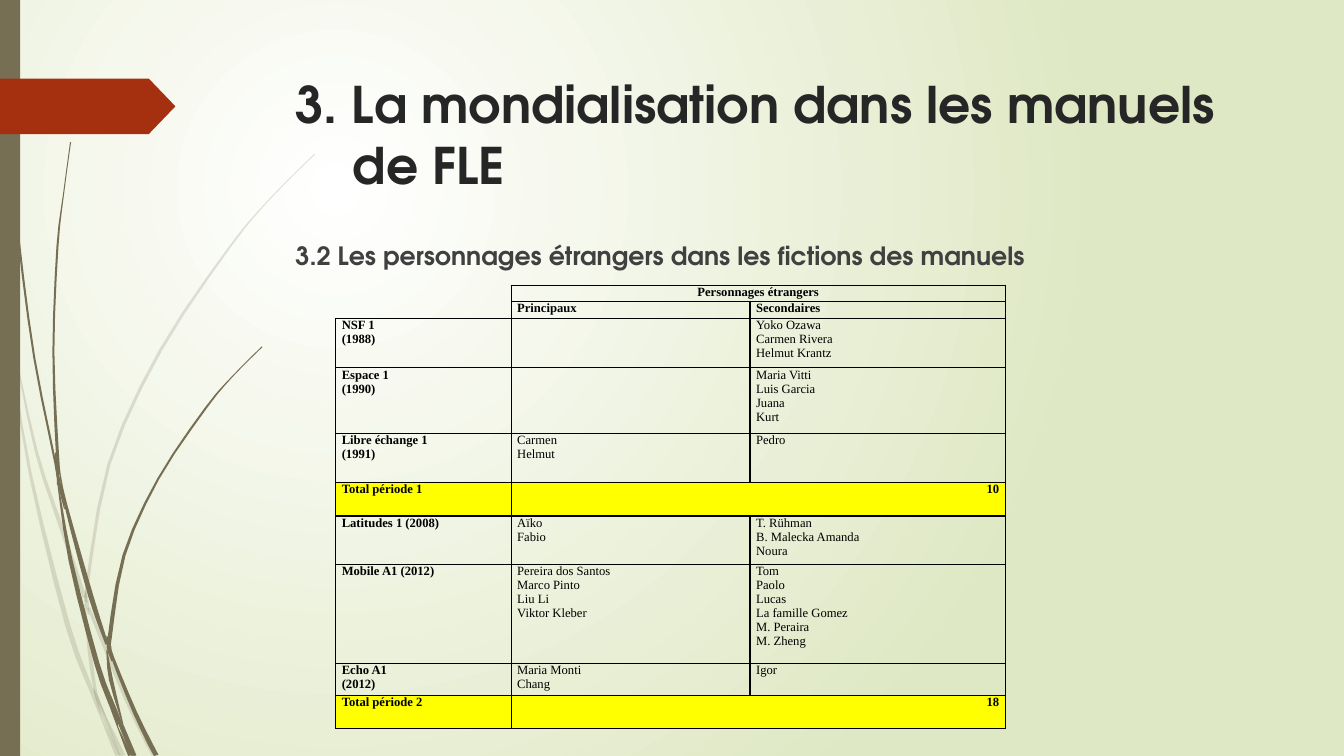
import math
import dataclasses
import lxml.etree
import pptx
import pptx.util
import pptx.dml.color
import pptx.enum.shapes
import pptx.enum.text
import pptx.oxml.ns

Inches = pptx.util.Inches
Pt = pptx.util.Pt
Align = pptx.enum.text.PP_ALIGN
Form = pptx.enum.shapes.MSO_SHAPE
qn = pptx.oxml.ns.qn


@dataclasses.dataclass
class Theme:
    head: str = "TeX Gyre Adventor"
    serif: str = "Times New Roman"
    title: int = 36
    sub: int = 18
    cell: int = 9
    dark: str = "262626"
    grey: str = "404040"
    black: str = "000000"
    olive: str = "766F54"
    rust: str = "A53010"
    yellow: str = "FFFF00"
    glow: tuple = ("FFFFFF", "DFE8C4")


def rgb(code):
    return pptx.dml.color.RGBColor.from_string(code)


def child(node, tag, **attrs):
    return lxml.etree.SubElement(node, qn(tag), **attrs)


def smooth(knots, steps=3):
    ends = [knots[0], *knots, knots[-1]]
    curve = []
    for a, b, c, d in zip(ends, ends[1:], ends[2:], ends[3:]):
        for k in range(steps):
            t = k / steps
            curve.append(tuple(
                (2 * q + (r - p) * t + (2 * p - 5 * q + 4 * r - s) * t ** 2
                 + (3 * q - p - 3 * r + s) * t ** 3) / 2
                for p, q, r, s in zip(a, b, c, d)))
    return curve + [knots[-1]]


class Deck:
    def __init__(self, theme):
        self.theme = theme
        self.show = pptx.Presentation()
        self.show.slide_width = Inches(13.33)
        self.show.slide_height = Inches(7.5)
        self.slide = self.show.slides.add_slide(self.show.slide_layouts[1])

    def back(self):
        fill = self.slide.background.fill
        fill.gradient()
        for stop, place, code in zip(fill.gradient_stops, (0, 1), self.theme.glow):
            stop.position = place
            stop.color.rgb = rgb(code)
        grad = self.slide.element.find(".//" + qn("a:gradFill"))
        grad.remove(grad.find(qn("a:lin")))
        ring = child(grad, "a:path", path="circle")
        child(ring, "a:fillToRect", l="50000", t="50000", r="100000", b="100000")

    def run(self, para, text, font, size, code, bold):
        run = para.add_run()
        run.text = text
        run.font.name = font
        run.font.size = Pt(size)
        run.font.bold = bold
        run.font.color.rgb = rgb(code)

    def holder(self, index, box, lines, size, code, hang=0):
        shape = self.slide.placeholders[index]
        shape.left, shape.top, shape.width, shape.height = map(Inches, box)
        frame = shape.text_frame
        frame.auto_size = pptx.enum.text.MSO_AUTO_SIZE.NONE
        frame.vertical_anchor = pptx.enum.text.MSO_ANCHOR.TOP
        para = frame.paragraphs[0]
        props = para._p.get_or_add_pPr()
        props.set("marL", str(Inches(hang)))
        props.set("indent", str(-Inches(hang)))
        child(props, "a:buNone")
        para.alignment = Align.LEFT
        para.space_before = Pt(0)
        for count, line in enumerate(lines):
            if count:
                para.add_line_break()
            self.run(para, line, self.theme.head, size, code, True)

    def paint(self, shape, code):
        shape.shadow.inherit = False
        shape.fill.solid()
        shape.fill.fore_color.rgb = rgb(code)
        shape.line.fill.background()

    def shape(self, form, box, code):
        shape = self.slide.shapes.add_shape(form, *map(Inches, box))
        self.paint(shape, code)
        return shape

    def blade(self, knots, alpha=None):
        spine = smooth(knots)
        left, right = [], []
        for k, (x, y, wide) in enumerate(spine):
            a, b = spine[max(k - 1, 0)], spine[min(k + 1, len(spine) - 1)]
            dx, dy = b[0] - a[0], b[1] - a[1]
            half = wide / 2 / math.hypot(dx, dy)
            for edge, sign in ((left, 1), (right, -1)):
                edge.append((Inches(max(x - sign * dy * half, 0)),
                             Inches(min(max(y + sign * dx * half, 0), 7.5))))
        points = left + right[::-1]
        draft = self.slide.shapes.build_freeform(*points[0])
        draft.add_line_segments(points[1:], close=True)
        shape = draft.convert_to_shape()
        self.paint(shape, self.theme.olive)
        if alpha:
            tint = shape._element.spPr.find(qn("a:solidFill"))[0]
            child(tint, "a:alpha", val=str(alpha * 1000))

    def edge(self, cell, sides):
        props = cell._tc.get_or_add_tcPr()
        for place, side in enumerate("LRTB"):
            line = lxml.etree.Element(qn("a:ln" + side), w=str(Pt(1)))
            if side in sides:
                child(child(line, "a:solidFill"), "a:srgbClr", val=self.theme.black)
            else:
                child(line, "a:noFill")
            props.insert(place, line)

    def cell(self, cell, text, bold, align, code=None, sides="LRTB"):
        cell.margin_left = cell.margin_right = Inches(0.06)
        cell.margin_top = cell.margin_bottom = 0
        if code:
            cell.fill.solid()
            cell.fill.fore_color.rgb = rgb(code)
        else:
            cell.fill.background()
        self.edge(cell, sides)
        frame = cell.text_frame
        for count, line in enumerate(text.split("\n")):
            para = frame.add_paragraph() if count else frame.paragraphs[0]
            para.alignment = align
            if line:
                self.run(para, line, self.theme.serif, self.theme.cell,
                         self.theme.black, bold)
            else:
                child(para._p, "a:endParaRPr", sz=str(self.theme.cell * 100))

    def table(self, box, cols, tall, rows):
        frame = self.slide.shapes.add_table(len(rows), len(cols), *map(Inches, box))
        grid = frame.table
        grid.first_row = grid.horz_banding = False
        for col, wide in zip(grid.columns, cols):
            col.width = Inches(wide)
        for row, high in zip(grid.rows, tall):
            row.height = Inches(high)
        for r, texts in enumerate(rows):
            total = texts[0].startswith("Total")
            for c, text in enumerate(texts):
                align = Align.RIGHT if total and c else Align.LEFT
                self.cell(grid.cell(r, c), text, r < 2 or c == 0 or total,
                          Align.CENTER if r == 0 else align,
                          self.theme.yellow if total else None,
                          "RB" if r < 2 and c == 0 else "LRTB")
            if r == 0 or total:
                grid.cell(r, 1).merge(grid.cell(r, 2))
        grid.cell(0, 0).merge(grid.cell(1, 0))


PALE = [
    [(0, 2.9, .04), (.06, 3.2, .04), (.11, 3.5, .01)],
    [(.14, 3.45, .01), (.36, 4.48, .03), (.6, 5.21, .04), (.84, 5.93, .04)],
    [(.88, 6.03, .03), (1.25, 6.93, .04), (1.53, 7.5, .05)],
    [(1.05, 7.11, .01), (1.22, 7.5, .05)],
    [(.11, 3.5, .01), (.3, 4.7, .03), (.67, 6.2, .05), (.92, 6.88, .04), (1.01, 7.14, .01)],
    [(.84, 5.99, .01), (.89, 6.46, .04), (.95, 6.87, .03), (1.05, 7.11, .01)],
    [(3.12, 1.53, .01), (2.68, 1.97, .01), (2.28, 2.45, .02), (1.59, 3.48, .03),
     (1.08, 4.61, .03), (.86, 5.84, .03), (.87, 5.96, .01)],
    [(1.01, 7.14, .01), (1.17, 7.5, .05)],
    [(.85, 5.86, .01), (.86, 5.98, .04), (.88, 6.1, .01)],
    [(.93, 6.83, .01), (1, 7.03, .04), (1.19, 7.5, .01)],
]
DARK = [
    [(.03, 0, .01), (.07, 1.1, .01), (.18, 2.33, .02), (.34, 3.55, .02), (.55, 4.6, .02),
     (.57, 4.81, .01)],
    [(.6, 4.72, .01), (.65, 5, .03), (.9, 5.91, .05), (1.06, 6.39, .03)],
    [(1.1, 6.41, .01), (1.12, 6.53, .03), (1.34, 7.07, .04), (1.55, 7.5, .05)],
    [(.57, 4.77, .01), (.7, 5.56, .04), (.96, 6.58, .05), (1.11, 7, .05), (1.17, 7.22, .01)],
    [(.7, 1.41, .01), (.63, 1.93, .01), (.57, 2.45, .02), (.53, 3.49, .02),
     (.57, 4.5, .03), (.6, 4.72, .01)],
    [(1.22, 7.19, .01), (1.34, 7.5, .03)],
    [(.55, 4.49, .01), (.58, 4.75, .03), (.64, 5.05, .01)],
    [(2.6, 3.44, .01), (2.31, 3.73, .01), (2.04, 4.05, .02), (1.57, 4.75, .02),
     (1.23, 5.51, .03), (1.09, 6.32, .04), (1.1, 6.41, .01)],
    [(1.17, 7.22, .01), (1.29, 7.5, .04)],
    [(1.06, 6.45, .01), (1.1, 6.74, .04), (1.22, 7.19, .01)],
    [(1.06, 6.31, .01), (1.08, 6.43, .04), (1.11, 6.56, .01)],
    [(1.1, 6.91, .01), (1.17, 7.12, .04), (1.32, 7.5, .03)],
]
ROWS = [
    ("", "Personnages étrangers", ""),
    ("", "Principaux", "Secondaires"),
    ("NSF 1\n(1988)", "", "Yoko Ozawa\nCarmen Rivera\nHelmut Krantz"),
    ("Espace 1\n(1990)", "", "Maria Vitti\nLuis Garcia\nJuana\nKurt"),
    ("Libre échange 1\n(1991)", "Carmen\nHelmut", "Pedro"),
    ("Total période 1", "10", ""),
    ("Latitudes 1 (2008)", "Aïko\nFabio", "T. Rühman\nB. Malecka Amanda\nNoura"),
    ("Mobile A1 (2012)", "Pereira dos Santos\nMarco Pinto\nLiu Li\nViktor Kleber",
     "Tom\nPaolo\nLucas\nLa famille Gomez\nM. Peraira\nM. Zheng"),
    ("Echo A1\n(2012)", "Maria Monti\nChang", "Igor"),
    ("Total période 2", "18", ""),
]
TALL = (.16, .17, .49, .65, .49, .33, .48, .98, .32, .33)


def main():
    theme = Theme()
    deck = Deck(theme)
    deck.back()
    for knots in PALE:
        deck.blade(knots, 20)
    for knots in DARK:
        deck.blade(knots)
    deck.shape(Form.RECTANGLE, (0, 0, .2, 7.5), theme.olive)
    arrow = deck.shape(Form.PENTAGON, (0, .78, 1.74, .55), theme.rust)
    arrow.adjustments[0] = .48
    deck.holder(0, (2.83, .68, 9.75, 1.4),
                ("3. La mondialisation dans les manuels", "de FLE"),
                theme.title, theme.dark, .57)
    deck.holder(1, (2.83, 2.33, 9.75, 4.13),
                ("3.2 Les personnages étrangers dans les fictions des manuels",),
                theme.sub, theme.grey)
    deck.table((3.33, 2.83, 6.64, 4.4), (1.74, 2.37, 2.53), TALL, ROWS)
    deck.show.save("out.pptx")


if __name__ == "__main__":
    main()
